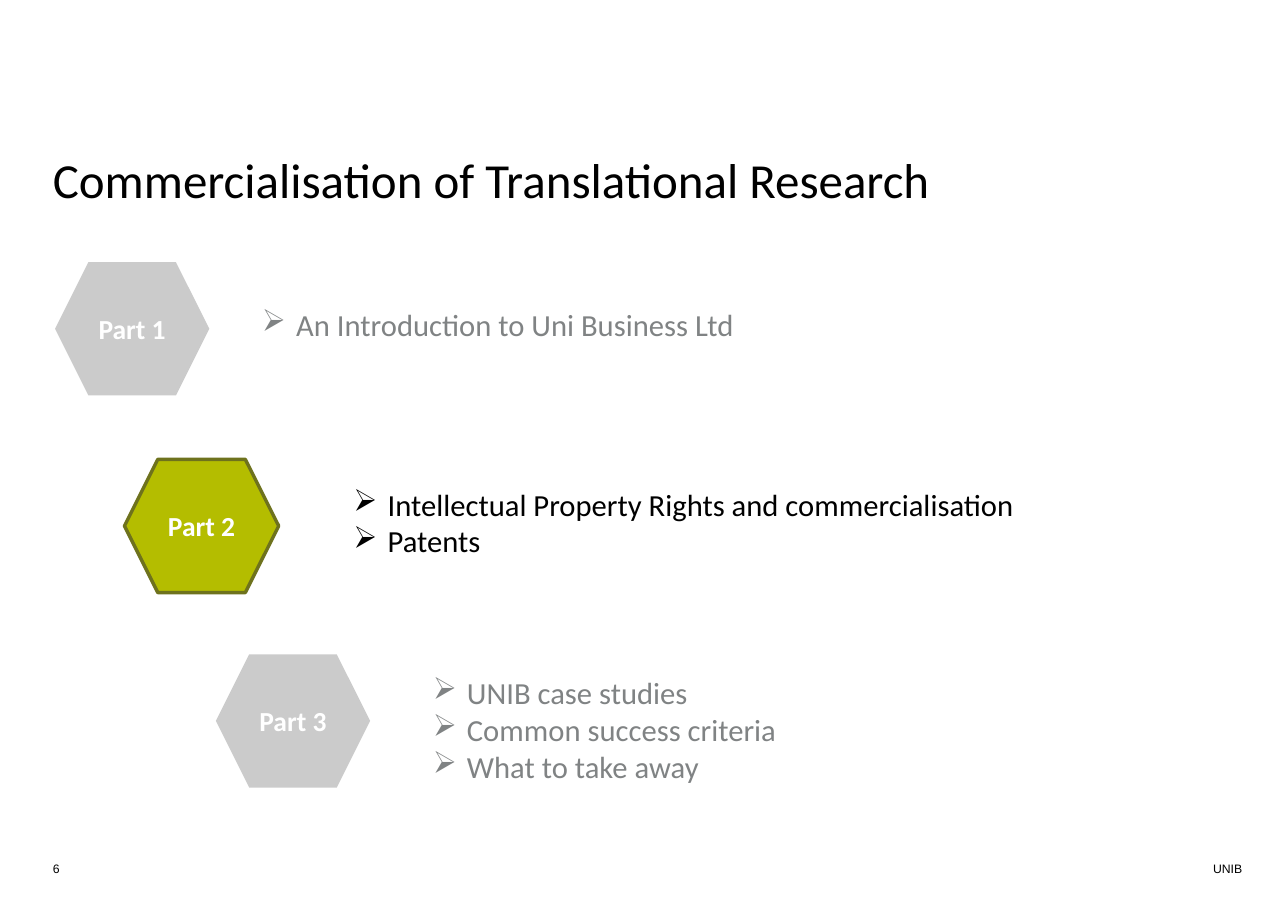
import pptx
import pptx.dml.color
import pptx.enum.shapes
import pptx.enum.text
import pptx.oxml.ns
import pptx.util
from lxml import etree
from pptx.dml.color import RGBColor
from pptx.util import Inches

BLACK = RGBColor(0x00, 0x00, 0x00)
WHITE = RGBColor(0xFF, 0xFF, 0xFF)
MUTED_TEXT = RGBColor(0x80, 0x83, 0x84)
MUTED_FILL = RGBColor(0xA6, 0xA6, 0xA6)
ACTIVE_FILL = RGBColor(0xB4, 0xBD, 0x00)
ACTIVE_LINE = RGBColor(0x6E, 0x72, 0x1D)

HEXAGON_WIDTH, HEXAGON_HEIGHT = 1.4, 1.21
LIST_WIDTH = 7.06
BULLET_INDENT = Inches(0.31)
ACTIVE_PART = 2

# Hexagon left and top, list left, top and height, list items
PARTS = [
    (0.5, 2.38, 2.28, 2.73, 0.44, ["An Introduction to Uni Business Ltd"]),
    (1.13, 4.17, 3.11, 4.36, 0.77,
     ["Intellectual Property Rights and commercialisation", "Patents"]),
    (1.96, 5.94, 3.83, 6.07, 1.11,
     ["UNIB case studies", "Common success criteria", "What to take away"]),
]


def set_font(paragraph, name, size, color, bold=False):
    paragraph.font.name = name
    paragraph.font.size = pptx.util.Pt(size)
    paragraph.font.color.rgb = color
    paragraph.font.bold = bold


def add_label(slide, box, text, font_name, size, anchor):
    """Add a single line of black text without margins."""
    frame = slide.shapes.add_textbox(*map(Inches, box)).text_frame
    frame.word_wrap = True
    frame.margin_left = frame.margin_right = 0
    frame.margin_top = frame.margin_bottom = 0
    frame.vertical_anchor = anchor
    paragraph = frame.paragraphs[0]
    paragraph.text = text
    set_font(paragraph, font_name, size, BLACK)
    return paragraph


def add_bullet(paragraph):
    properties = paragraph._p.get_or_add_pPr()
    properties.set("marL", str(BULLET_INDENT))
    properties.set("indent", str(-BULLET_INDENT))
    bullet = etree.SubElement(properties, pptx.oxml.ns.qn("a:buChar"))
    bullet.set("char", "➢")


def add_hexagon(slide, box, text, active):
    shape = slide.shapes.add_shape(
        pptx.enum.shapes.MSO_SHAPE.HEXAGON, *map(Inches, box))
    shape.shadow.inherit = False
    shape.fill.solid()
    if active:
        shape.fill.fore_color.rgb = ACTIVE_FILL
        shape.line.color.rgb = ACTIVE_LINE
        shape.line.width = pptx.util.Pt(2.25)
    else:
        shape.fill.fore_color.rgb = MUTED_FILL
        color = shape._element.spPr.find(".//" + pptx.oxml.ns.qn("a:srgbClr"))
        etree.SubElement(color, pptx.oxml.ns.qn("a:alpha")).set("val", "58000")
        shape.line.fill.background()
    shape.text_frame.vertical_anchor = pptx.enum.text.MSO_ANCHOR.MIDDLE
    paragraph = shape.text_frame.paragraphs[0]
    paragraph.text = text
    paragraph.alignment = pptx.enum.text.PP_ALIGN.CENTER
    set_font(paragraph, "Calibri", 18, WHITE, bold=True)


def add_bullet_list(slide, box, items, color):
    frame = slide.shapes.add_textbox(*map(Inches, box)).text_frame
    frame.word_wrap = True
    for index, item in enumerate(items):
        paragraph = frame.add_paragraph() if index else frame.paragraphs[0]
        paragraph.text = item
        add_bullet(paragraph)
        set_font(paragraph, "Calibri", 20, color)


def add_agenda(slide):
    for number, part in enumerate(PARTS, start=1):
        left, top, list_left, list_top, list_height, items = part
        active = number == ACTIVE_PART
        add_hexagon(slide, (left, top, HEXAGON_WIDTH, HEXAGON_HEIGHT),
                    f"Part {number}", active)
        add_bullet_list(slide, (list_left, list_top, LIST_WIDTH, list_height),
                        items, BLACK if active else MUTED_TEXT)


def add_footer(slide, top, height):
    middle = pptx.enum.text.MSO_ANCHOR.MIDDLE
    add_label(slide, (0.48, top, 1.35, height), "6", "Arial", 8, middle)
    add_label(slide, (11.01, top, 0.51, height), "UNIB", "Arial", 8, middle)


def main():
    presentation = pptx.Presentation()
    presentation.slide_width = Inches(11.69)
    presentation.slide_height = Inches(8.27)
    slide = presentation.slides.add_slide(presentation.slide_layouts[6])
    title = add_label(slide, (0.48, 1.42, 10.4, 0.95),
                      "Commercialisation of Translational Research",
                      "Calibri", 32, pptx.enum.text.MSO_ANCHOR.TOP)
    title.line_spacing = 0.9
    add_agenda(slide)
    add_footer(slide, 7.77, 0.23)
    presentation.save("out.pptx")


if __name__ == "__main__":
    main()
